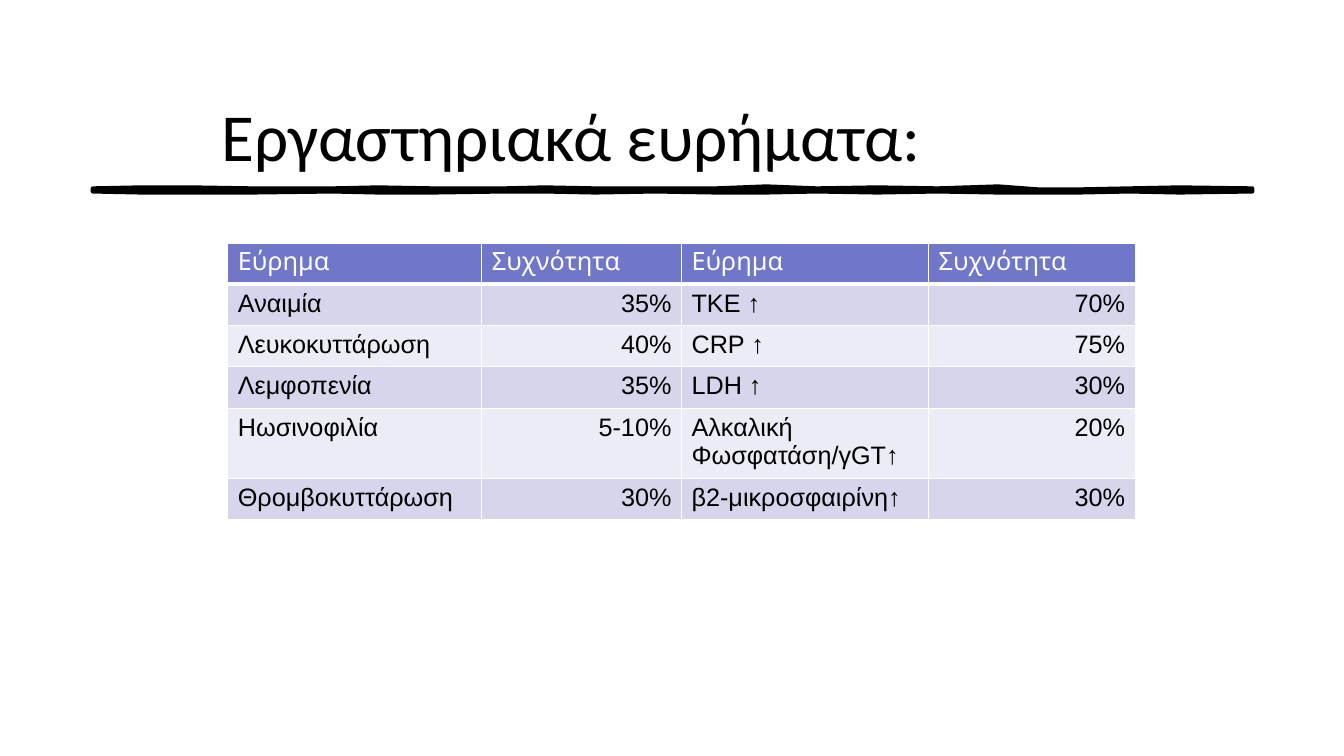
from lxml.etree import SubElement
from pptx import Presentation
from pptx.dml.color import RGBColor
from pptx.enum.text import MSO_ANCHOR as Anchor, PP_ALIGN as Align
from pptx.oxml.ns import qn
from pptx.util import Inches, Pt

COLORS = {
    "ink": "000000",
    "white": "FFFFFF",
    "header": "7077C9",
    "odd": "D5D6EB",
    "even": "EBECF5",
}
FINDINGS = [
    ["Εύρημα", "Συχνότητα", "Εύρημα", "Συχνότητα"],
    ["Αναιμία", "35%", "ΤΚΕ ↑", "70%"],
    ["Λευκοκυττάρωση", "40%", "CRP ↑", "75%"],
    ["Λεμφοπενία", "35%", "LDH ↑", "30%"],
    ["Ηωσινοφιλία", "5-10%", "Αλκαλική Φωσφατάση/γGT↑", "20%"],
    ["Θρομβοκυττάρωση", "30%", "β2-μικροσφαιρίνη↑", "30%"],
]
COLUMN_WIDTHS = [2.52, 1.98, 2.45, 2.05]
BRUSH_EDGES = [
    (0.92, 1.87, 1.9), (1.4, 1.86, 1.91), (1.9, 1.86, 1.91),
    (2.5, 1.87, 1.91), (3.3, 1.87, 1.9), (3.75, 1.86, 1.91),
    (4.3, 1.87, 1.91), (5.0, 1.87, 1.9), (5.4, 1.86, 1.9),
    (5.9, 1.87, 1.91), (6.5, 1.87, 1.9), (7.1, 1.87, 1.91),
    (7.6, 1.85, 1.91), (8.1, 1.87, 1.9), (8.7, 1.86, 1.91),
    (9.3, 1.87, 1.9), (9.9, 1.85, 1.91), (10.3, 1.88, 1.91),
    (10.7, 1.88, 1.91), (11.2, 1.87, 1.9), (11.7, 1.86, 1.91),
    (12.42, 1.87, 1.9),
]


class FindingsSlide:
    """Draws styled elements on one slide."""

    def __init__(self, slide):
        self.slide = slide

    def color(self, name):
        return RGBColor.from_string(COLORS[name])

    def format_text(self, paragraph, font_name, size, color):
        for run in paragraph.runs:
            run.font.name = font_name
            run.font.size = Pt(size)
            run.font.bold = False
            run.font.color.rgb = self.color(color)

    def add_brush_line(self, edges):
        top = [(x, upper) for x, upper, lower in edges]
        bottom = [(x, lower) for x, upper, lower in reversed(edges)]
        outline = [(Inches(x), Inches(y)) for x, y in top + bottom]
        builder = self.slide.shapes.build_freeform(*outline[0])
        builder.add_line_segments(outline[1:], close=True)
        shape = builder.convert_to_shape()
        shape.shadow.inherit = False
        shape.fill.solid()
        shape.fill.fore_color.rgb = self.color("ink")
        shape.line.color.rgb = self.color("ink")
        shape.line.width = Pt(3)

    def add_title(self, text, left, top, width, height):
        box = self.slide.shapes.add_textbox(
            Inches(left), Inches(top), Inches(width), Inches(height))
        frame = box.text_frame
        frame.word_wrap = True
        frame.vertical_anchor = Anchor.MIDDLE
        frame.text = text
        frame.paragraphs[0].line_spacing = 0.9
        self.format_text(frame.paragraphs[0], "Calibri", 48, "ink")

    def add_borders(self, cell, widths):
        properties = cell._tc.get_or_add_tcPr()
        for side, width in widths.items():
            line = SubElement(properties, qn(f"a:ln{side}"), w=str(Pt(width)))
            fill = SubElement(line, qn("a:solidFill"))
            SubElement(fill, qn("a:srgbClr"), val=COLORS["white"])

    def add_table(self, rows, widths, left, top, row_height):
        table = self.slide.shapes.add_table(
            len(rows), len(widths), Inches(left), Inches(top),
            Inches(sum(widths)), Inches(row_height * len(rows))).table
        for column, width in zip(table.columns, widths):
            column.width = Inches(width)
        for row_index, row in enumerate(rows):
            table.rows[row_index].height = Inches(row_height)
            for column_index, text in enumerate(row):
                cell = table.cell(row_index, column_index)
                self.fill_cell(cell, text, row_index, column_index)

    def fill_cell(self, cell, text, row_index, column_index):
        is_header = row_index == 0
        self.add_borders(cell, {
            "L": 1, "R": 1,
            "T": 3 if row_index == 1 else 1,
            "B": 3 if is_header else 1,
        })
        band = "odd" if row_index % 2 else "even"
        cell.fill.solid()
        cell.fill.fore_color.rgb = self.color("header" if is_header else band)
        cell.text_frame.text = text
        paragraph = cell.text_frame.paragraphs[0]
        if is_header:
            self.format_text(paragraph, "Comic Neue", 18, "white")
        else:
            self.format_text(paragraph, "Arial", 18, "ink")
            if column_index % 2:
                paragraph.alignment = Align.RIGHT


def main():
    presentation = Presentation()
    presentation.slide_width = Inches(13.33)
    presentation.slide_height = Inches(7.5)
    slide = presentation.slides.add_slide(presentation.slide_layouts[6])
    findings = FindingsSlide(slide)
    findings.add_brush_line(BRUSH_EDGES)
    findings.add_title("Εργαστηριακά ευρήματα:", 2.1, 0.76, 9, 1.25)
    findings.add_table(FINDINGS, COLUMN_WIDTHS, 2.26, 2.41, 0.41)
    presentation.save("out.pptx")


if __name__ == "__main__":
    main()
